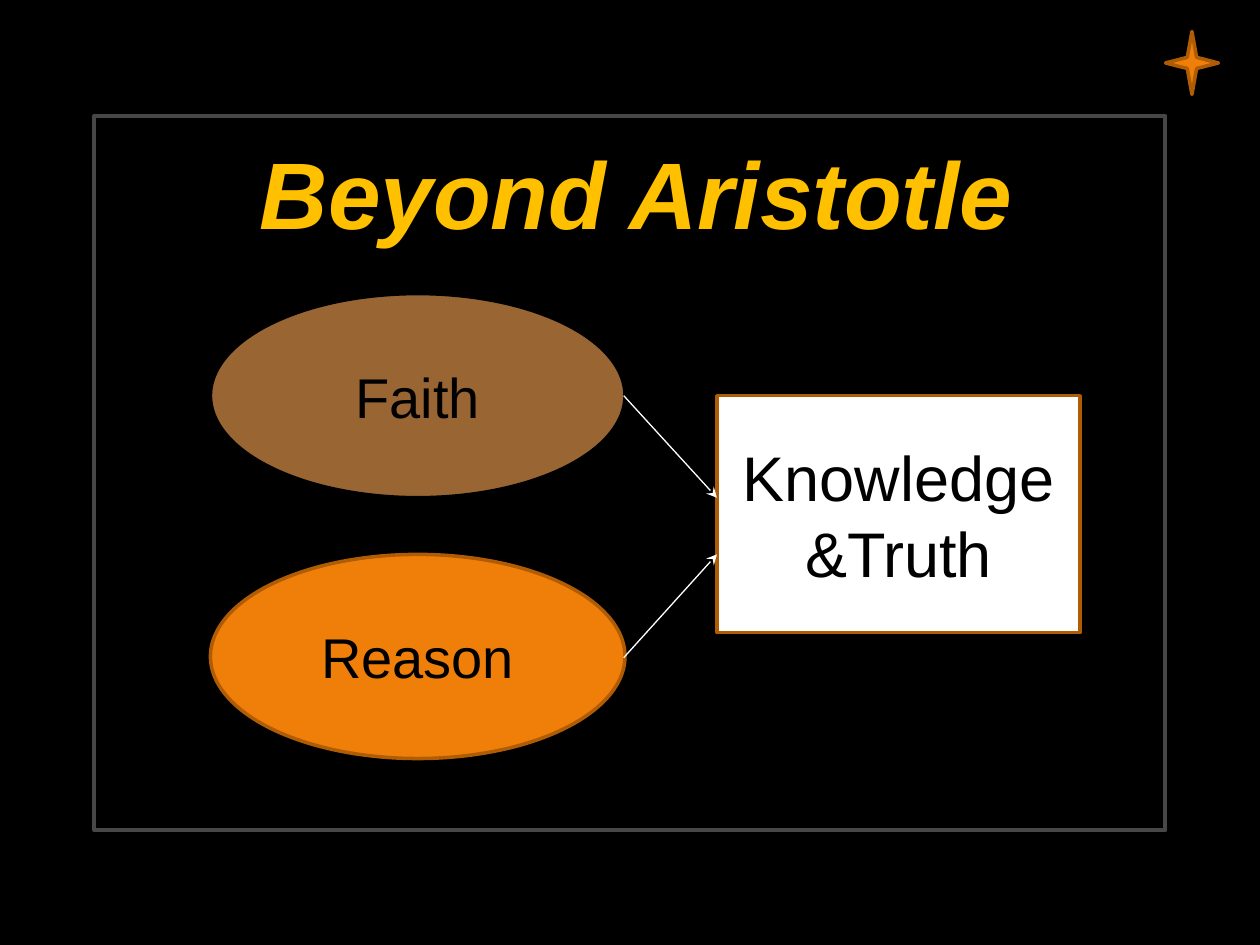
from typing import NamedTuple, Optional

from lxml import etree
from pptx import Presentation
from pptx import util as u
from pptx.dml.color import RGBColor
from pptx.enum import shapes, text
from pptx.oxml.ns import qn

PX = 9144  # EMU per px, 100 px to the inch
FONT = "Arial"
COLORS = {
    "black": "000000",
    "white": "FFFFFF",
    "gold": "FFC000",
    "gray": "474747",
    "brown": "996633",
    "orange": "F07F09",
    "rust": "B05C05",
}
KIND = shapes.MSO_SHAPE


class Box(NamedTuple):
    kind: int
    left: int
    top: int
    width: int
    height: int
    fill: Optional[str]
    line: str
    label: str = ""
    size: int = 32
    line_width: float = 2


class Arrow(NamedTuple):
    x1: int
    y1: int
    x2: int
    y2: int


BOXES = [
    Box(KIND.RECTANGLE, 75, 92, 850, 567, None, "gray", line_width=2.25),
    Box(KIND.OVAL, 167, 233, 329, 162, "brown", "black", "Faith"),
    Box(KIND.OVAL, 167, 440, 329, 162, "orange", "rust", "Reason"),
    Box(KIND.RECTANGLE, 569, 314, 288, 188, "white", "rust", "Knowledge &Truth", 36),
    Box(KIND.STAR_4_POINT, 925, 25, 42, 50, "orange", "rust"),
]
ARROWS = [Arrow(495, 314, 569, 395), Arrow(495, 522, 569, 440)]


def color(name: str) -> RGBColor:
    return RGBColor.from_string(COLORS[name])


def write(shape, words: str, size: int, color_name: str) -> None:
    """Centre one paragraph in the shape."""
    frame = shape.text_frame
    frame.word_wrap = True
    frame.auto_size = text.MSO_AUTO_SIZE.NONE
    frame.vertical_anchor = text.MSO_ANCHOR.MIDDLE
    paragraph = frame.paragraphs[0]
    paragraph.text = words
    paragraph.alignment = text.PP_ALIGN.CENTER
    paragraph.font.name = FONT
    paragraph.font.size = u.Pt(size)
    paragraph.font.color.rgb = color(color_name)


def draw_box(slide, box: Box) -> None:
    shape = slide.shapes.add_shape(
        box.kind, *(PX * n for n in (box.left, box.top, box.width, box.height))
    )
    shape.shadow.inherit = False
    if box.fill:
        shape.fill.solid()
        shape.fill.fore_color.rgb = color(box.fill)
    else:
        shape.fill.background()
    shape.line.color.rgb = color(box.line)
    shape.line.width = u.Pt(box.line_width)
    if box.label:
        write(shape, box.label, box.size, "black")


def draw_arrow(slide, arrow: Arrow) -> None:
    connector = slide.shapes.add_connector(
        shapes.MSO_CONNECTOR.STRAIGHT, *(PX * n for n in arrow)
    )
    connector.line.color.rgb = color("white")
    connector.line.width = u.Pt(0.75)
    line = connector.line._get_or_add_ln()
    etree.SubElement(line, qn("a:tailEnd"), type="stealth")
    etree.SubElement(connector._element.spPr, qn("a:effectLst"))


def draw_title(slide) -> None:
    title = slide.shapes.title
    # Slightly right of the frame's centre
    title.left, title.top, title.width, title.height = (
        PX * n for n in (80, 91, 850, 122)
    )
    write(title, "Beyond Aristotle", 54, "gold")
    font = title.text_frame.paragraphs[0].font
    font.bold = font.italic = True


def main() -> None:
    presentation = Presentation()
    presentation.slide_width, presentation.slide_height = 1000 * PX, 750 * PX
    slide = presentation.slides.add_slide(presentation.slide_layouts[5])
    slide.background.fill.solid()
    slide.background.fill.fore_color.rgb = color("black")

    draw_title(slide)
    # Frame, two sources, their result and the corner star
    for box in BOXES:
        draw_box(slide, box)
    for arrow in ARROWS:
        draw_arrow(slide, arrow)

    presentation.save("out.pptx")


if __name__ == "__main__":
    main()
